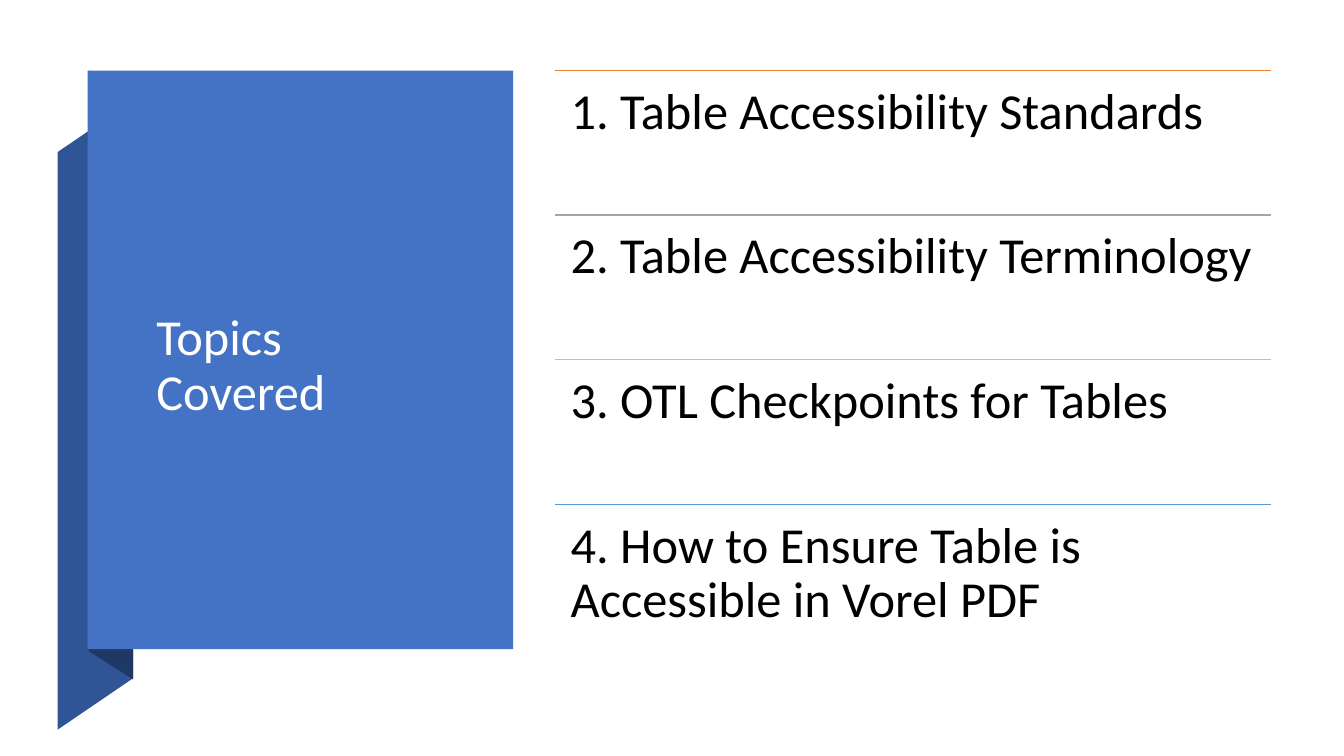
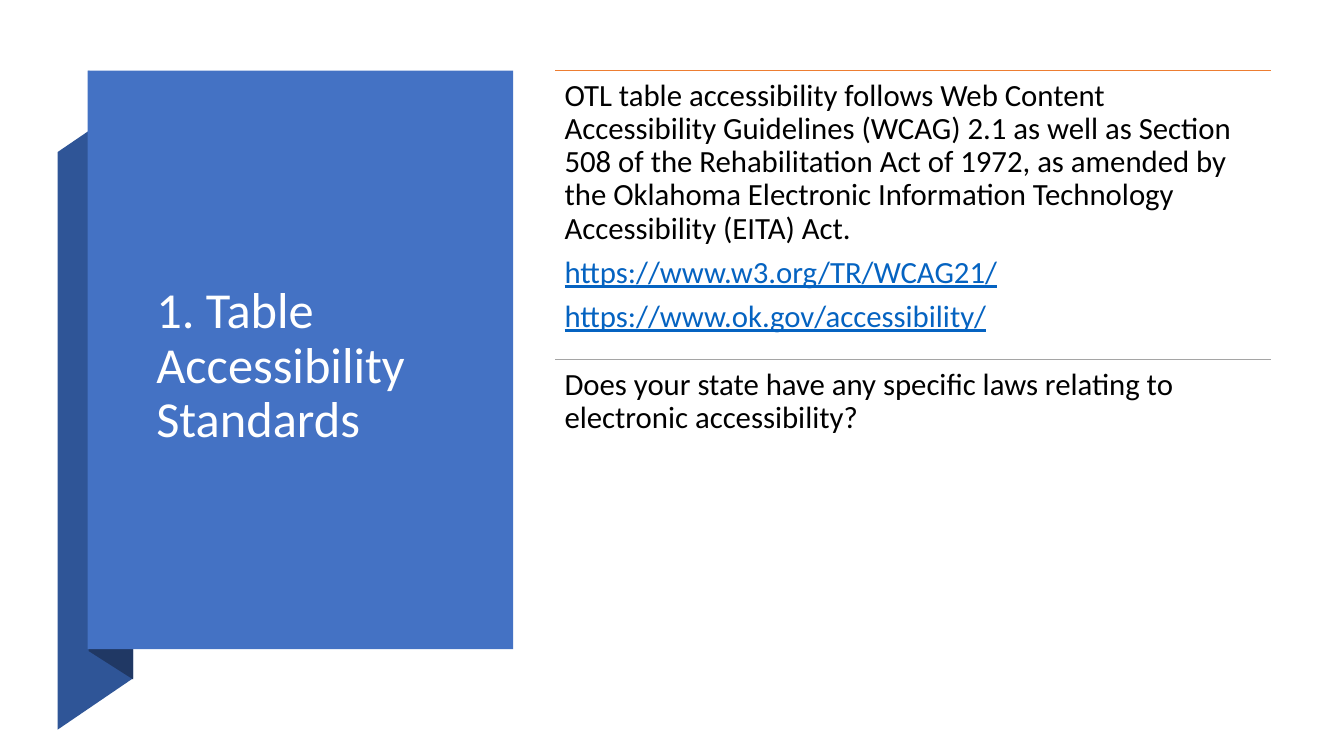
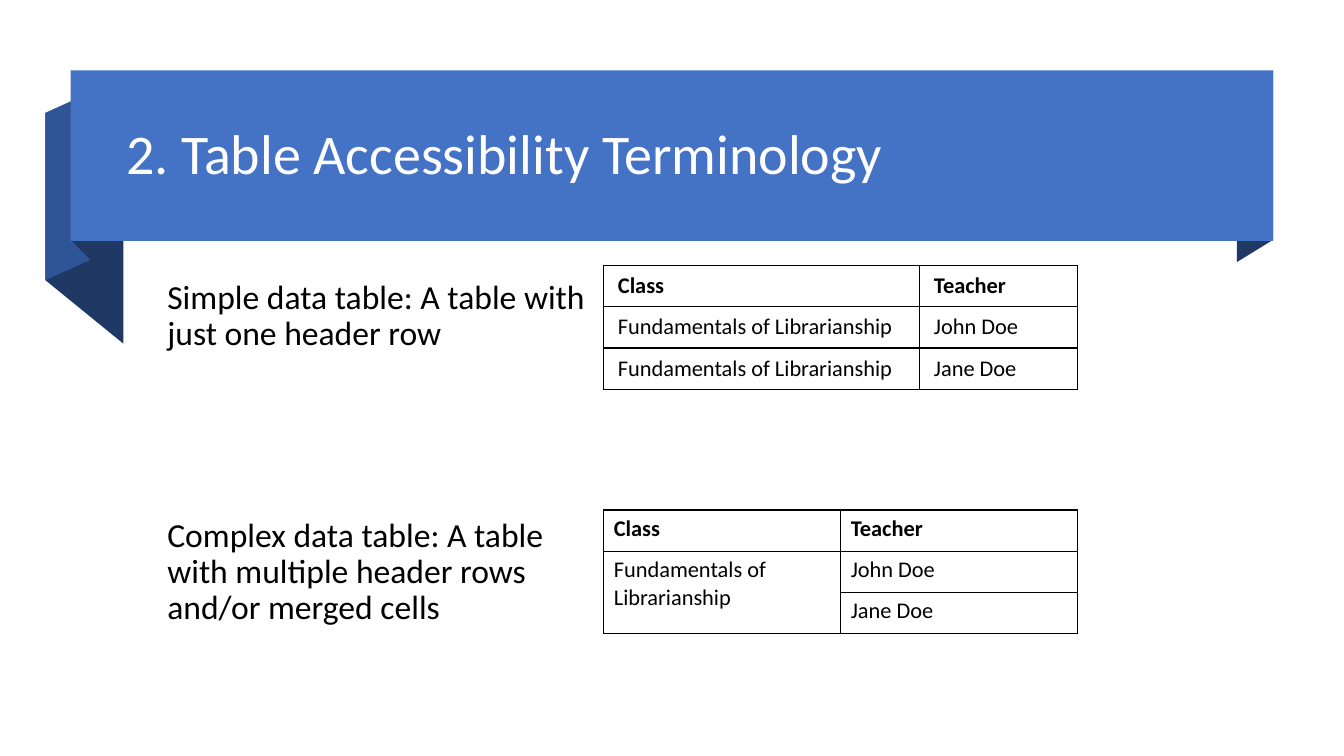
"""Builds three slides on accessible tables: topics, standards and terminology."""
from itertools import cycle

from lxml import etree
from pptx import Presentation
from pptx.dml.color import RGBColor
from pptx.enum.shapes import MSO_CONNECTOR, MSO_SHAPE
from pptx.enum.text import MSO_ANCHOR, MSO_AUTO_SIZE, PP_ALIGN
from pptx.oxml.ns import qn
from pptx.util import Inches, Pt

STRAIGHT = MSO_CONNECTOR.STRAIGHT
RECTANGLE = MSO_SHAPE.RECTANGLE
MIDDLE = MSO_ANCHOR.MIDDLE
LEFT = PP_ALIGN.LEFT
NO_AUTOFIT = MSO_AUTO_SIZE.NONE

BLUE = RGBColor(0x44, 0x72, 0xC4)
FOLD_BLUE = RGBColor(0x2F, 0x55, 0x97)
SHADE_BLUE = RGBColor(0x20, 0x38, 0x64)
ORANGE = RGBColor(0xED, 0x7D, 0x31)
GRAY = RGBColor(0xA5, 0xA5, 0xA5)
GOLD = RGBColor(0xFF, 0xC0, 0x00)
SKY = RGBColor(0x5B, 0x9B, 0xD5)
LINK = RGBColor(0x05, 0x63, 0xC1)
BLACK = RGBColor(0, 0, 0)
WHITE = RGBColor(0xFF, 0xFF, 0xFF)

FONT = "Calibri"
TIGHT = 0.9
RULE_COLORS = (ORANGE, GRAY, GOLD, SKY)

deck = Presentation()
deck.slide_width, deck.slide_height = Inches(13.33), Inches(7.5)
TITLE_ONLY, TITLE_AND_BODY = deck.slide_layouts[5], deck.slide_layouts[1]


def share(*percents):
    """Turn alternating percentages of slide width and height into lengths."""
    sides = cycle((deck.slide_width, deck.slide_height))
    return [round(percent * side / 100) for percent, side in zip(percents, sides)]


def write(paragraph, text, size, color=BLACK, bold=False):
    """Add one formatted run to a left-aligned paragraph."""
    paragraph.alignment = LEFT
    run = paragraph.add_run()
    run.text = text
    run.font.name, run.font.size, run.font.bold = FONT, Pt(size), bold
    run.font.color.rgb = color
    return run


SIDE_PANEL = {
    "folds": [
        (FOLD_BLUE, [(4.28, 96.53), (9.9, 89.73), (9.9, 13.33), (4.28, 20.13)]),
        (SHADE_BLUE, [(6.6, 86.13), (9.9, 89.87), (9.9, 13.2), (6.6, 9.33)]),
    ],
    "panel": (6.53, 9.33, 31.65, 76.53),
    "title": (10.88, 22.27, 22.58, 52.53),
    "size": 36,
}
TOP_BANNER = {
    "folds": [
        (SHADE_BLUE, [(94.73, 31.73), (92.03, 34.67), (92.03, 12.13), (94.73, 9.33)]),
        (SHADE_BLUE, [(9.19, 45.47), (3.38, 37.07), (3.38, 14.93), (9.19, 23.33)]),
        (FOLD_BLUE, [(6.68, 34.4), (3.38, 37.07), (3.38, 14.93), (6.68, 12.27)]),
        (SHADE_BLUE, [(6.68, 34.27), (5.33, 31.87), (5.33, 9.33), (6.68, 11.87)]),
    ],
    "panel": (5.25, 9.33, 89.48, 22.53),
    "title": (8.63, 11.07, 84.53, 19.33),
    "size": 40,
}

slides = []
for layout, ribbon, heading in (
    (TITLE_ONLY, SIDE_PANEL, "Topics Covered"),
    (TITLE_ONLY, SIDE_PANEL, "1. Table Accessibility Standards"),
    (TITLE_AND_BODY, TOP_BANNER, "2. Table Accessibility Terminology"),
):
    slide = deck.slides.add_slide(layout)
    slides.append(slide)
    ribbon_parts = []
    for color, corners in ribbon["folds"]:
        start, *rest = [share(*corner) for corner in corners]
        outline = slide.shapes.build_freeform(*start)
        outline.add_line_segments(rest, close=True)
        ribbon_parts.append((outline.convert_to_shape(), color))
    panel = slide.shapes.add_shape(RECTANGLE, *share(*ribbon["panel"]))
    for part, color in ribbon_parts + [(panel, BLUE)]:
        part.shadow.inherit = False
        part.fill.solid()
        part.fill.fore_color.rgb = color
        part.line.fill.background()

    title = slide.shapes.title
    title.left, title.top, title.width, title.height = share(*ribbon["title"])
    panel.element.addnext(title.element)
    title.text_frame.auto_size = NO_AUTOFIT
    title.text_frame.vertical_anchor = MIDDLE
    title.text_frame.paragraphs[0].line_spacing = TIGHT
    write(title.text_frame.paragraphs[0], heading, ribbon["size"], WHITE)

topics_slide, standards_slide, terms_slide = slides

LIST_LEFT, LIST_WIDTH = 41.33, 53.25
LIST_TOP, LIST_HEIGHT = 9.33, 76.53
topics = [
    ["1. Table Accessibility Standards"],
    ["2. Table Accessibility Terminology"],
    ["3. OTL Checkpoints for Tables"],
    ["4. How to Ensure Table is Accessible in Vorel PDF"],
]
standards = [
    [
        "OTL table accessibility follows Web Content Accessibility Guidelines (WCAG) 2.1 "
        "as well as Section 508 of the Rehabilitation Act of 1972, as amended by the "
        "Oklahoma Electronic Information Technology Accessibility (EITA) Act.",
        "https://www.w3.org/TR/WCAG21/",
        "https://www.ok.gov/accessibility/",
    ],
    ["Does your state have any specific laws relating to electronic accessibility?"],
]
for slide, entries, size, inset in (
    (topics_slide, topics, 36, 0.15),
    (standards_slide, standards, 22, 0.09),
):
    row_height = LIST_HEIGHT / len(entries)
    for row, (lines, color) in enumerate(zip(entries, RULE_COLORS)):
        left, top, width, height = share(
            LIST_LEFT, LIST_TOP + row * row_height, LIST_WIDTH, row_height)
        rule = slide.shapes.add_connector(STRAIGHT, left, top, left + width, top)
        rule.line.color.rgb = color
        rule.line.width = Pt(1)
        etree.SubElement(rule.element.spPr, qn("a:effectLst"))

        frame = slide.shapes.add_textbox(left, top, width, height).text_frame
        frame.word_wrap = True
        frame.margin_left = frame.margin_right = Inches(inset)
        frame.margin_top = frame.margin_bottom = Inches(inset)
        for index, line in enumerate(lines):
            paragraph = frame.add_paragraph() if index else frame.paragraphs[0]
            paragraph.line_spacing = TIGHT
            paragraph.space_after = Pt(0.35 * size)
            is_address = line.startswith("https")
            run = write(paragraph, line, size, LINK if is_address else BLACK)
            run.font.underline = is_address

definitions = terms_slide.placeholders[1]
(definitions.left, definitions.top,
 definitions.width, definitions.height) = share(11.7, 36.4, 33.23, 52)
frame = definitions.text_frame
frame.auto_size = NO_AUTOFIT
for index, (definition, gap) in enumerate((
    ("Simple data table: A table with just one header row", 0),
    ("Complex data table: A table with multiple header rows and/or merged cells", 118),
)):
    paragraph = frame.add_paragraph() if index else frame.paragraphs[0]
    paragraph.line_spacing = TIGHT
    paragraph.space_before = Pt(gap)
    write(paragraph, definition, 24)
    properties = paragraph._p.get_or_add_pPr()
    properties.set("marL", "0")
    properties.set("indent", "0")
    etree.SubElement(properties, qn("a:buNone"))

TABLE_LEFT, TABLE_WIDTH, TABLE_ROW = 44.93, 35.26, 5.45
COURSE = "Fundamentals of Librarianship"
HEADER = ("Class", "Teacher")
simple = (HEADER, (COURSE, "John Doe"), (COURSE, "Jane Doe"))
complex_rows = (HEADER, (COURSE, "John Doe"), ("", "Jane Doe"))
for records, top, first_share, side_inset, edge_inset, merged in (
    (simple, 35.07, 0.667, 0.14, 0.07, False),
    (complex_rows, 67.47, 0.5, 0.1, 0.05, True),
):
    box = share(TABLE_LEFT, top, TABLE_WIDTH, TABLE_ROW * len(records))
    table = terms_slide.shapes.add_table(len(records), len(HEADER), *box).table
    table.horz_banding = False
    table.columns[0].width = round(box[2] * first_share)
    table.columns[1].width = box[2] - table.columns[0].width
    for row, record in enumerate(records):
        for column, text in enumerate(record):
            cell = table.cell(row, column)
            cell.margin_left = cell.margin_right = Inches(side_inset)
            cell.margin_top = cell.margin_bottom = Inches(edge_inset)
            for side in ("lnL", "lnR", "lnT", "lnB"):
                border = etree.SubElement(
                    cell._tc.get_or_add_tcPr(), qn(f"a:{side}"), w=str(Pt(1)))
                ink = etree.SubElement(border, qn("a:solidFill"))
                etree.SubElement(ink, qn("a:srgbClr"), val=str(BLACK))
            cell.fill.solid()
            cell.fill.fore_color.rgb = WHITE
            if text:
                write(cell.text_frame.paragraphs[0], text, 16, bold=row == 0)
    if merged:
        table.cell(1, 0).merge(table.cell(2, 0))

deck.save("out.pptx")
